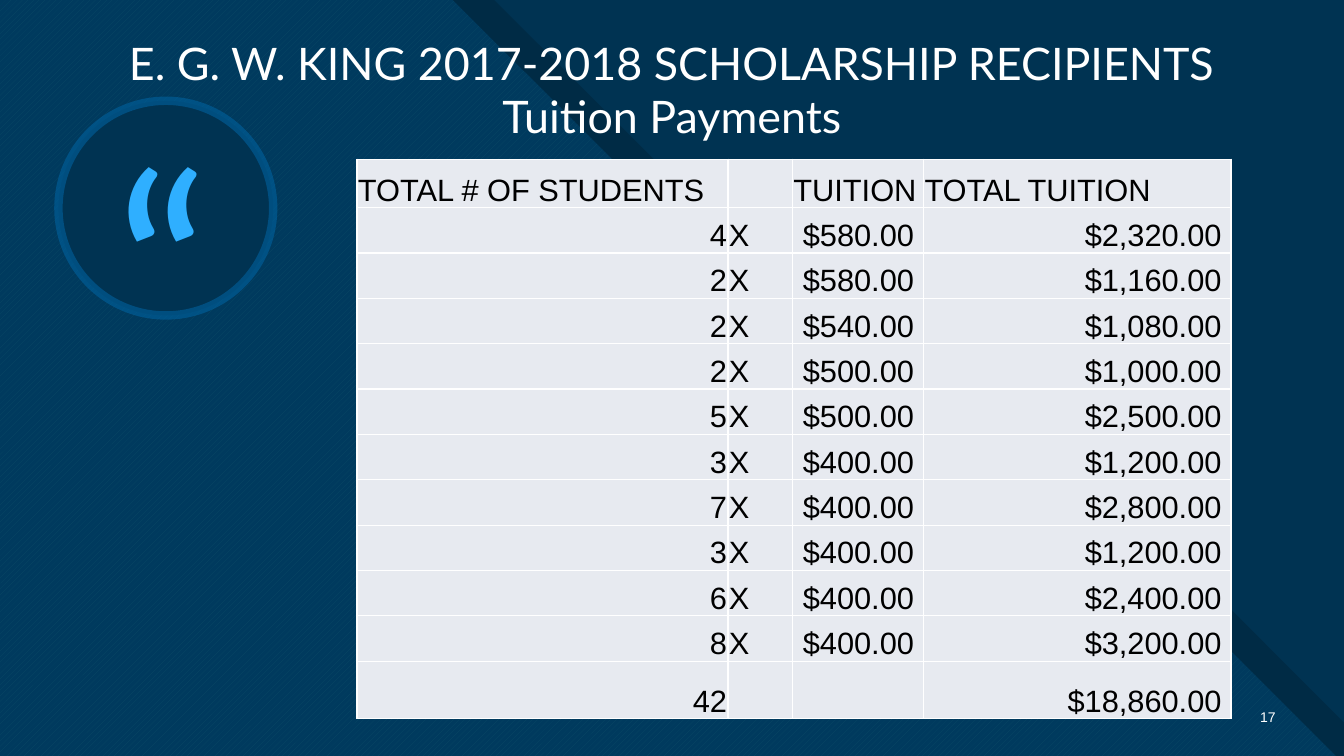
from lxml.etree import SubElement
from pptx import Presentation
from pptx.dml.color import RGBColor
from pptx.enum.dml import MSO_PATTERN
from pptx.enum.shapes import MSO_SHAPE
from pptx.enum.text import MSO_ANCHOR, PP_ALIGN
from pptx.oxml import parse_xml
from pptx.oxml.ns import nsdecls, qn
from pptx.util import Inches, Pt

NAVY, BLUE, SKY, TEAL = "003352", "0065A4", "2FAFFF", "47C3D3"
WHITE, BLACK, CELL = "FFFFFF", "000000", "E7EAF0"


def color(value):
    return RGBColor.from_string(value)


def set_opacity(fill_element, percent):
    color_element = fill_element.find(".//" + qn("a:srgbClr"))
    SubElement(color_element, qn("a:alpha"), val=str(percent * 1000))


class ScholarshipSlide:
    heading_font = "Lato"
    body_font = "Arial"

    def __init__(self, presentation):
        self.slide = presentation.slides.add_slide(presentation.slide_layouts[6])
        self.shapes = self.slide.shapes

    def style_text(self, text_frame, font, size, text_color, align):
        for paragraph in text_frame.paragraphs:
            paragraph.alignment = align
            for run in paragraph.runs:
                run.font.name = font
                run.font.size = Pt(size)
                run.font.color.rgb = color(text_color)

    def preset(self, kind, left, top, width, height, fill):
        shape = self.shapes.add_shape(
            kind, Inches(left), Inches(top), Inches(width), Inches(height))
        shape.shadow.inherit = False
        shape.fill.solid()
        shape.fill.fore_color.rgb = color(fill)
        shape.line.fill.background()
        return shape

    def panel(self, points, fill, opacity=100, pattern=None, back=None):
        corners = [(Inches(x), Inches(y)) for x, y in points]
        builder = self.shapes.build_freeform(*corners[0])
        builder.add_line_segments(corners[1:], close=True)
        shape = builder.convert_to_shape()
        shape.shadow.inherit = False
        shape.line.fill.background()
        if pattern:
            shape.fill.patterned()
            shape.fill.pattern = pattern
            shape.fill.back_color.rgb = color(back)
        else:
            shape.fill.solid()
        shape.fill.fore_color.rgb = color(fill)
        if opacity < 100:
            set_opacity(shape.element.spPr.find(qn("a:solidFill")), opacity)

    def text(self, content, left, top, width, height, font, size, text_color,
             align=PP_ALIGN.CENTER, anchor=MSO_ANCHOR.TOP):
        box = self.shapes.add_textbox(
            Inches(left), Inches(top), Inches(width), Inches(height))
        text_frame = box.text_frame
        text_frame.word_wrap = True
        text_frame.vertical_anchor = anchor
        text_frame.text = content
        self.style_text(text_frame, font, size, text_color, align)

    def cell(self, cell, content, align):
        cell.fill.solid()
        cell.fill.fore_color.rgb = color(CELL)
        cell.vertical_anchor = MSO_ANCHOR.BOTTOM
        cell.margin_left = cell.margin_right = cell.margin_top = Inches(0.01)
        cell.margin_bottom = 0
        cell.text_frame.text = content
        self.style_text(cell.text_frame, self.body_font, 22, BLACK, align)
        properties = cell._tc.get_or_add_tcPr()
        for index, side in enumerate(("lnL", "lnR", "lnT", "lnB")):
            properties.insert(index, parse_xml(
                f'<a:{side} {nsdecls("a")} w="{Pt(1)}"><a:solidFill>'
                f'<a:srgbClr val="{WHITE}"/></a:solidFill></a:{side}>'))

    def table(self, rows, left, top, widths, heights):
        table = self.shapes.add_table(
            len(rows), len(widths), Inches(left), Inches(top),
            Inches(sum(widths)), Inches(sum(heights))).table
        table.first_row = table.horz_banding = False
        for column, width in zip(table.columns, widths):
            column.width = Inches(width)
        for row, height in zip(table.rows, heights):
            row.height = Inches(height)
        for row_index, values in enumerate(rows):
            for column_index, value in enumerate(values):
                is_label = row_index == 0 or column_index == 1
                align = PP_ALIGN.LEFT if is_label else PP_ALIGN.RIGHT
                self.cell(table.cell(row_index, column_index), value, align)


def main():
    presentation = Presentation()
    presentation.slide_width = Inches(13.33)
    presentation.slide_height = Inches(7.5)
    page = ScholarshipSlide(presentation)

    # Background with a dark diagonal band
    page.preset(MSO_SHAPE.RECTANGLE, 0, 0, 13.33, 7.5, NAVY)
    page.panel([(0.42, 0), (4.9, 0), (7.88, 2.97), (9.14, 2.97),
                (13.33, 7.17), (13.33, 7.5), (0.42, 7.5)], BLACK)
    page.panel([(0, 0), (4.49, 0), (7.46, 2.97), (8.72, 2.97),
                (13.25, 7.5), (0, 7.5)], TEAL,
               pattern=MSO_PATTERN.WIDE_UPWARD_DIAGONAL, back=BLUE)
    page.panel([(0, 0), (6.95, 0), (9.92, 2.97), (11.18, 2.97),
                (13.33, 5.13), (13.33, 7.5), (0, 7.5)], NAVY, opacity=85)

    # Quotation mark in a ring
    ring = page.preset(MSO_SHAPE.OVAL, 0.58, 1, 2.13, 2.13, NAVY)
    ring.line.color.rgb = color(BLUE)
    ring.line.width = Pt(6)
    set_opacity(ring.element.spPr.find(qn("a:ln")), 55)
    page.text("“", 1.05, 1.01, 1.1, 3.13, page.heading_font, 184, SKY)

    # Title and slide number
    page.text("E. G. W. KING 2017-2018 SCHOLARSHIP RECIPIENTS\vTuition Payments",
              0.52, 0.3, 12.29, 5.52, page.heading_font, 32, WHITE)
    page.text("17", 12.31, 6.91, 0.44, 0.4, page.body_font, 10, WHITE,
              PP_ALIGN.RIGHT, MSO_ANCHOR.MIDDLE)

    # Tuition table: students times tuition, with totals
    awards = [(4, 580), (2, 580), (2, 540), (2, 500), (5, 500),
              (3, 400), (7, 400), (3, 400), (6, 400), (8, 400)]
    rows = [("TOTAL # OF STUDENTS", "", "TUITION", "TOTAL TUITION")]
    rows += [(str(students), "X", f"${tuition:.2f} ", f"${students * tuition:,.2f} ")
             for students, tuition in awards]
    total_students = sum(students for students, _ in awards)
    total_tuition = sum(students * tuition for students, tuition in awards)
    rows.append((str(total_students), "", "", f"${total_tuition:,.2f} "))
    page.table(rows, 3.54, 1.58, [3.68, 0.64, 1.3, 3.05],
               [0.48] + [0.45] * len(awards) + [0.57])

    presentation.save("out.pptx")


if __name__ == "__main__":
    main()
